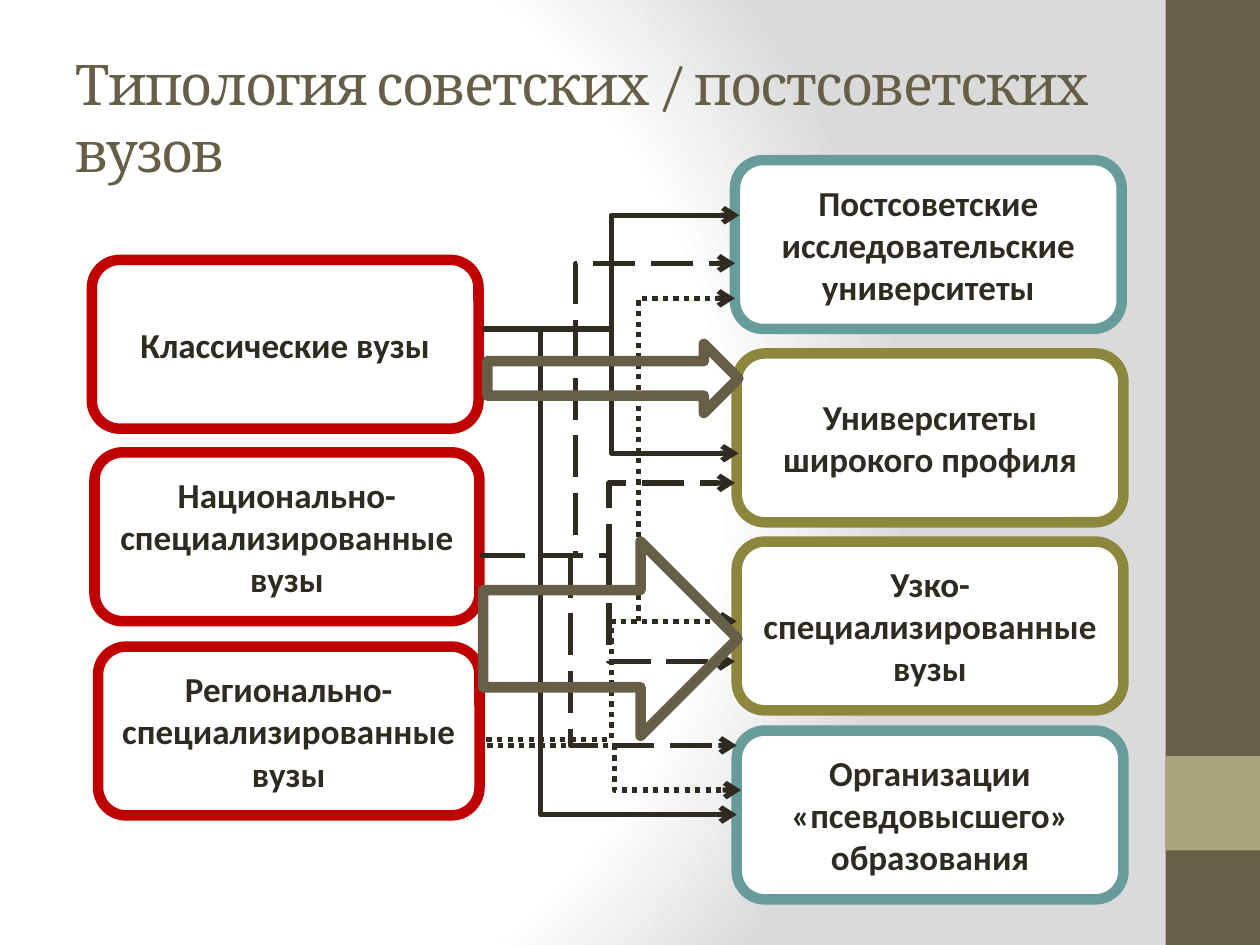
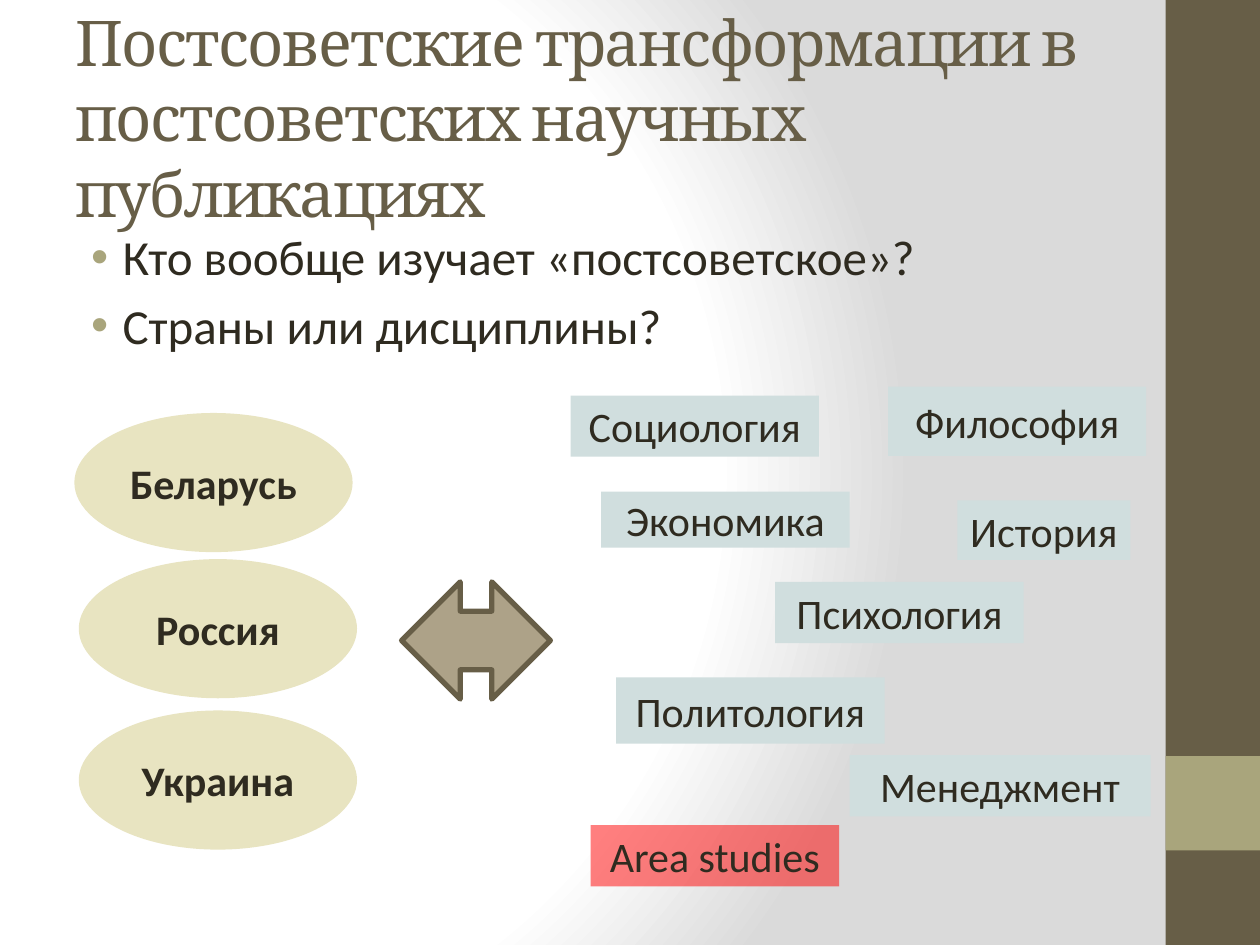
from lxml.etree import SubElement
from pptx import Presentation
from pptx.dml.color import RGBColor
from pptx.enum.dml import MSO_LINE
from pptx.enum.shapes import MSO_CONNECTOR, MSO_SHAPE
from pptx.enum.text import MSO_ANCHOR, MSO_AUTO_SIZE, PP_ALIGN
from pptx.oxml import parse_xml
from pptx.oxml.ns import nsdecls, qn
from pptx.util import Pt

COLORS = {
    "brown": "675E47",
    "sage": "A9A57C",
    "text": "2F2B20",
    "white": "FFFFFF",
    "gray": "DADADA",
    "soviet": "C00000",
    "teal": "689C9A",
    "olive": "8D873E",
    "cream": "E8E4C1",
    "pale_teal": "D0DEDE",
    "red": "FF0000",
    "tan": "ADA288",
}


def rgb(name):
    return RGBColor.from_string(COLORS[name])


class Deck:
    title_font = "Cambria"
    body_font = "Calibri"
    title_only = 5

    def __init__(self):
        self.presentation = Presentation()
        self.presentation.slide_width = Pt(720)
        self.presentation.slide_height = Pt(540)
        self.slide = None
        self.set_background()

    def set_background(self):
        master = self.presentation.slide_master
        master.background.fill.gradient()
        gradient = master.element.xpath("p:cSld/p:bg/p:bgPr/a:gradFill")[0]
        stops = "".join(
            f'<a:gs pos="{position * 1000}"><a:srgbClr val="{COLORS[name]}"/></a:gs>'
            for position, name in [(0, "white"), (75, "white"), (100, "gray")]
        )
        radial = parse_xml(
            f'<a:gradFill {nsdecls("a")} rotWithShape="1"><a:gsLst>{stops}</a:gsLst>'
            '<a:path path="circle">'
            '<a:fillToRect l="20000" t="50000" r="100000" b="50000"/>'
            "</a:path></a:gradFill>"
        )
        gradient.getparent().replace(gradient, radial)

    def add_slide(self, title, size):
        layout = self.presentation.slide_layouts[self.title_only]
        self.slide = self.presentation.slides.add_slide(layout)
        self.shape(MSO_SHAPE.RECTANGLE, (666, 0, 54, 540), fill="brown")
        self.shape(MSO_SHAPE.RECTANGLE, (666, 432, 54, 54), fill="sage")
        self.title(title, size)

    def title(self, text, size):
        placeholder = self.slide.shapes.title
        placeholder.left, placeholder.top = Pt(36), Pt(21.6)
        placeholder.width, placeholder.height = Pt(600), Pt(90)
        frame = placeholder.text_frame
        frame.text = text
        frame.word_wrap = True
        frame.auto_size = MSO_AUTO_SIZE.NONE
        frame.vertical_anchor = MSO_ANCHOR.MIDDLE
        paragraph = frame.paragraphs[0]
        paragraph.alignment = PP_ALIGN.LEFT
        self.format_font(paragraph.font, size, "brown", self.title_font)
        paragraph.runs[0].font._element.set("spc", "-100")

    def format_font(self, font, size, color="text", name=body_font, bold=False):
        font.name = name
        font.size = Pt(size)
        font.bold = bold
        font.color.rgb = rgb(color)

    def shape(self, kind, box, fill=None, line=None, width=6, alpha=None):
        shape = self.slide.shapes.add_shape(kind, *map(Pt, box))
        shape.shadow.inherit = False
        if fill:
            shape.fill.solid()
            shape.fill.fore_color.rgb = rgb(fill)
        else:
            shape.fill.background()
        if alpha:
            color = shape._element.spPr.find(qn("a:solidFill"))[0]
            SubElement(color, qn("a:alpha"), val=str(alpha * 1000))
        if line:
            shape.line.color.rgb = rgb(line)
            shape.line.width = Pt(width)
        else:
            shape.line.fill.background()
        return shape

    def label(self, kind, text, box, size, bold=False, **style):
        frame = self.shape(kind, box, **style).text_frame
        frame.text = text
        frame.word_wrap = True
        frame.vertical_anchor = MSO_ANCHOR.MIDDLE
        paragraph = frame.paragraphs[0]
        paragraph.alignment = PP_ALIGN.CENTER
        self.format_font(paragraph.font, size, bold=bold)

    def bullets(self, lines, box, size):
        frame = self.slide.shapes.add_textbox(*map(Pt, box)).text_frame
        frame.word_wrap = True
        frame.text = "\n".join(lines)
        for paragraph in frame.paragraphs:
            paragraph.space_before = Pt(size * 0.2)
            self.format_font(paragraph.font, size)
            properties = paragraph._p.get_or_add_pPr()
            properties.set("marL", str(Pt(27)))
            properties.set("indent", str(Pt(-18)))
            bullet = [
                f'<a:buClr {nsdecls("a")}><a:srgbClr val="{COLORS["sage"]}"/></a:buClr>',
                f'<a:buFont {nsdecls("a")} typeface="Arial"/>',
                f'<a:buChar {nsdecls("a")} char="•"/>',
            ]
            defaults = properties.find(qn("a:defRPr"))
            for xml in bullet:
                defaults.addprevious(parse_xml(xml))

    def elbow(self, start, end, dash, bend=0.5):
        connector = self.slide.shapes.add_connector(
            MSO_CONNECTOR.ELBOW, *map(Pt, start + end)
        )
        connector.line.color.rgb = rgb("text")
        connector.line.width = Pt(3)
        connector.line.dash_style = dash
        properties = connector._element.spPr
        SubElement(connector.line._get_or_add_ln(), qn("a:tailEnd"), type="arrow")
        SubElement(properties, qn("a:effectLst"))
        adjustments = properties.find(qn("a:prstGeom")).get_or_add_avLst()
        SubElement(
            adjustments, qn("a:gd"), name="adj1", fmla=f"val {round(bend * 100000)}"
        )


def add_typology(deck):
    deck.add_slide("Типология советских / постсоветских вузов", 32)
    universities = [
        ("Классические вузы", 52.5, 148.5, 221, "soviet"),
        ("Национально-специализированные вузы", 54, 258.5, 220, "soviet"),
        ("Регионально-специализированные вузы", 56, 369.5, 218, "soviet"),
        ("Постсоветские исследовательские университеты", 420, 91.5, 221, "teal"),
        ("Университеты широкого профиля", 421, 202, 221, "olive"),
        ("Узко-специализированные вузы", 421, 309.5, 221, "olive"),
        ("Организации «псевдовысшего» образования", 421, 417.5, 221, "teal"),
    ]
    for text, left, top, width, line in universities:
        deck.label(
            MSO_SHAPE.ROUNDED_RECTANGLE, text, (left, top, width, 96.5), 20,
            bold=True, fill="white", line=line,
        )

    paths = {
        MSO_LINE.SOLID: [
            ((277, 188), (422, 259), 0.5),
            ((276, 188), (422.5, 123), 0.5),
            ((309, 188), (421, 465.5), 0),
        ],
        MSO_LINE.LONG_DASH: [
            ((274.5, 317.5), (420, 150.5), 0.375),
            ((276, 317.5), (420, 378), 0.5),
            ((326, 317.5), (421, 426), 0),
            ((276, 317.5), (420, 276), 0.5),
        ],
        MSO_LINE.ROUND_DOT: [
            ((278.5, 426), (423.5, 451.5), 0.5),
            ((278, 422.5), (421, 355), 0.5),
            ((365, 355), (420, 170.5), 0),
        ],
    }
    for dash, routes in paths.items():
        for start, end, bend in routes:
            deck.elbow(start, end, dash, bend)

    for box in [(278.5, 196.5, 143.5, 39.5), (276, 309.5, 145.5, 111)]:
        deck.shape(MSO_SHAPE.RIGHT_ARROW, box, line="brown")


def add_publications(deck):
    deck.add_slide(
        "Постсоветские трансформации в постсоветских научных публикациях", 36
    )
    deck.bullets(
        ["Кто вообще изучает «постсоветское»?", "Страны или дисциплины?"],
        (36, 126, 600, 378), 28,
    )
    countries = [("Беларусь", 42.5, 236), ("Россия", 45, 319.5), ("Украина", 45, 406)]
    for text, left, top in countries:
        deck.label(
            MSO_SHAPE.OVAL, text, (left, top, 159, 79.5), 24, bold=True, fill="cream"
        )

    disciplines = [
        ("Социология", (326, 226, 142, 35)),
        ("Экономика", (343.5, 281, 142, 32)),
        ("Политология", (352, 387, 153.5, 38)),
        ("История", (547, 286, 99, 34)),
        ("Философия", (507.5, 221, 147.5, 39.5)),
        ("Менеджмент", (485.5, 431.5, 172, 35)),
        ("Психология", (443, 332.5, 142, 35)),
    ]
    for text, box in disciplines:
        deck.label(MSO_SHAPE.RECTANGLE, text, box, 24, fill="pale_teal")
    deck.label(
        MSO_SHAPE.RECTANGLE, "Area studies", (337.5, 471.5, 142, 35), 24,
        fill="red", alpha=50,
    )
    deck.shape(
        MSO_SHAPE.LEFT_RIGHT_ARROW, (229.5, 332.5, 85, 67),
        fill="tan", line="brown", width=3,
    )


def main():
    deck = Deck()
    add_typology(deck)
    add_publications(deck)
    deck.presentation.save("out.pptx")


if __name__ == "__main__":
    main()
